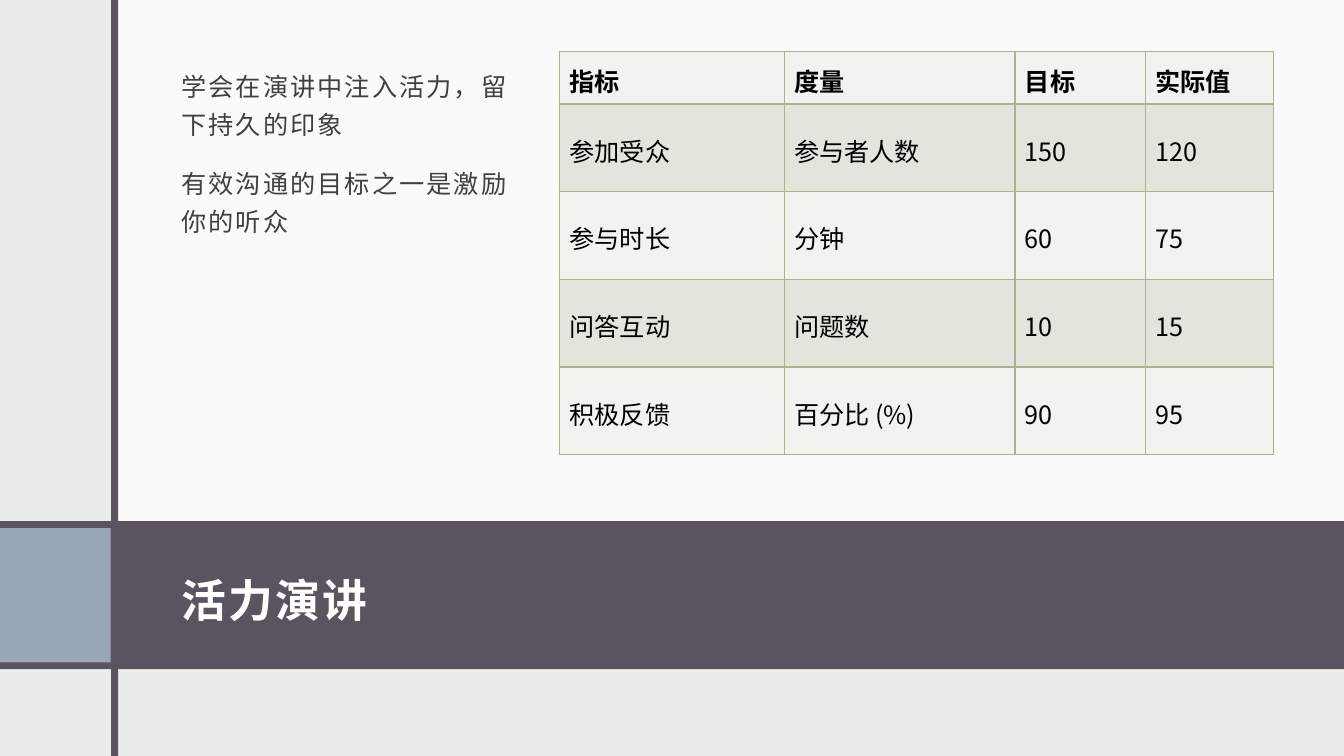
"""Build a slide on energetic delivery, with notes beside a table of metrics."""
from lxml.etree import SubElement
from pptx import Presentation
from pptx.dml.color import RGBColor
from pptx.enum.shapes import MSO_SHAPE
from pptx.enum.text import MSO_ANCHOR, MSO_AUTO_SIZE, PP_ALIGN
from pptx.oxml import parse_xml
from pptx.oxml.ns import nsdecls, qn
from pptx.util import Cm, Pt

BACKGROUND = RGBColor(0xEB, 0xED, 0xEB)
WHITE = RGBColor(0xFF, 0xFF, 0xFF)
PLUM = RGBColor(0x59, 0x54, 0x60)
BLUE_GREY = RGBColor(0x97, 0xA7, 0xB8)
NOTE_GREY = RGBColor(0x40, 0x40, 0x40)
BLACK = RGBColor(0x00, 0x00, 0x00)
LIGHT_ROW = RGBColor(0xF0, 0xF3, 0xEE)
DARK_ROW = RGBColor(0xE1, 0xE5, 0xDC)
BORDER = RGBColor(0xA5, 0xB5, 0x92)
FONT = "Noto Sans CJK SC"


def style(paragraph, size, color, bold=False, spacing=0):
    font = paragraph.font
    font.size, font.bold, font.name = Pt(size), bold, FONT
    font.color.rgb = color
    properties = paragraph._p.pPr.find(qn("a:defRPr"))
    properties.set("spc", str(spacing))
    SubElement(properties, qn("a:ea"), typeface=FONT)


def set_frame(frame, anchor, top_inset):
    frame.word_wrap, frame.auto_size = True, MSO_AUTO_SIZE.NONE
    frame.vertical_anchor = anchor
    frame.margin_left = frame.margin_right = Cm(0.3)
    frame.margin_top, frame.margin_bottom = Cm(top_inset), Cm(0.25)


prs = Presentation()
prs.slide_width, prs.slide_height = Cm(33.87), Cm(19.05)
slide = prs.slides.add_slide(prs.slide_layouts[1])
slide.background.fill.solid()
slide.background.fill.fore_color.rgb = BACKGROUND
title, notes = slide.placeholders

panels = [
    (2.9, 0, 30.97, 13.13, WHITE),
    (0, 13.13, 33.87, 3.73, PLUM),
    (0, 13.31, 2.79, 3.38, BLUE_GREY),
    (2.8, 0, 0.18, 19.05, PLUM),
]
for left, top, width, height, color in panels:
    panel = slide.shapes.add_shape(
        MSO_SHAPE.RECTANGLE, Cm(left), Cm(top), Cm(width), Cm(height))
    panel.shadow.inherit = False
    panel.line.fill.background()
    panel.fill.solid()
    panel.fill.fore_color.rgb = color
    title._element.addprevious(panel._element)
    if color == WHITE:
        tint = panel._element.spPr.find(qn("a:solidFill"))[0]
        SubElement(tint, qn("a:alpha"), val="75000")

title.left, title.top, title.width, title.height = Cm(4.27), Cm(13.54), Cm(27.81), Cm(2.87)
title.text = "活力演讲"
set_frame(title.text_frame, MSO_ANCHOR.MIDDLE, 0.5)
heading = title.text_frame.paragraphs[0]
heading.alignment = PP_ALIGN.LEFT
style(heading, 32, WHITE, bold=True, spacing=150)

notes.left, notes.top, notes.width, notes.height = Cm(4.27), Cm(1.3), Cm(9.47), Cm(10.74)
notes.text = "学会在演讲中注入活力，留下持久的印象\n有效沟通的目标之一是激励你的听众"
set_frame(notes.text_frame, MSO_ANCHOR.TOP, 0.3)
for note in notes.text_frame.paragraphs:
    note.line_spacing = 1.25
    note.space_before, note.space_after = Pt(9.3), Pt(6)
    indents = note._p.get_or_add_pPr()
    indents.set("marL", "0")
    indents.set("indent", "0")
    SubElement(indents, qn("a:buNone"))
    style(note, 18, NOTE_GREY, spacing=150)

metrics = [
    ("指标", "度量", "目标", "实际值"),
    ("参加受众", "参与者人数", "150", "120"),
    ("参与时长", "分钟", "60", "75"),
    ("问答互动", "问题数", "10", "15"),
    ("积极反馈", "百分比 (%)", "90", "95"),
]
column_widths = [5.66, 5.82, 3.28, 3.23]
row_heights = [1.32] + [2.21] * 4
table = slide.shapes.add_table(
    len(metrics), len(column_widths), Cm(14.1), Cm(1.3),
    Cm(sum(column_widths)), Cm(sum(row_heights))).table
table.first_row = table.horz_banding = False
for column, width in zip(table.columns, column_widths):
    column.width = Cm(width)
for index, (row, height, values) in enumerate(zip(table.rows, row_heights, metrics)):
    row.height = Cm(height)
    for cell, value in zip(row.cells, values):
        cell.text = value
        cell.vertical_anchor = MSO_ANCHOR.MIDDLE
        cell.margin_left = cell.margin_right = cell.margin_top = Cm(0.25)
        cell.margin_bottom = Cm(0.13)
        style(cell.text_frame.paragraphs[0], 18, BLACK, bold=index == 0)
        for side in ("lnL", "lnR", "lnT", "lnB"):
            cell._tc.get_or_add_tcPr().append(parse_xml(
                f'<a:{side} {nsdecls("a")} w="12700"><a:solidFill>'
                f'<a:srgbClr val="{BORDER}"/></a:solidFill></a:{side}>'))
        cell.fill.solid()
        cell.fill.fore_color.rgb = DARK_ROW if index % 2 else LIGHT_ROW

prs.save("out.pptx")
